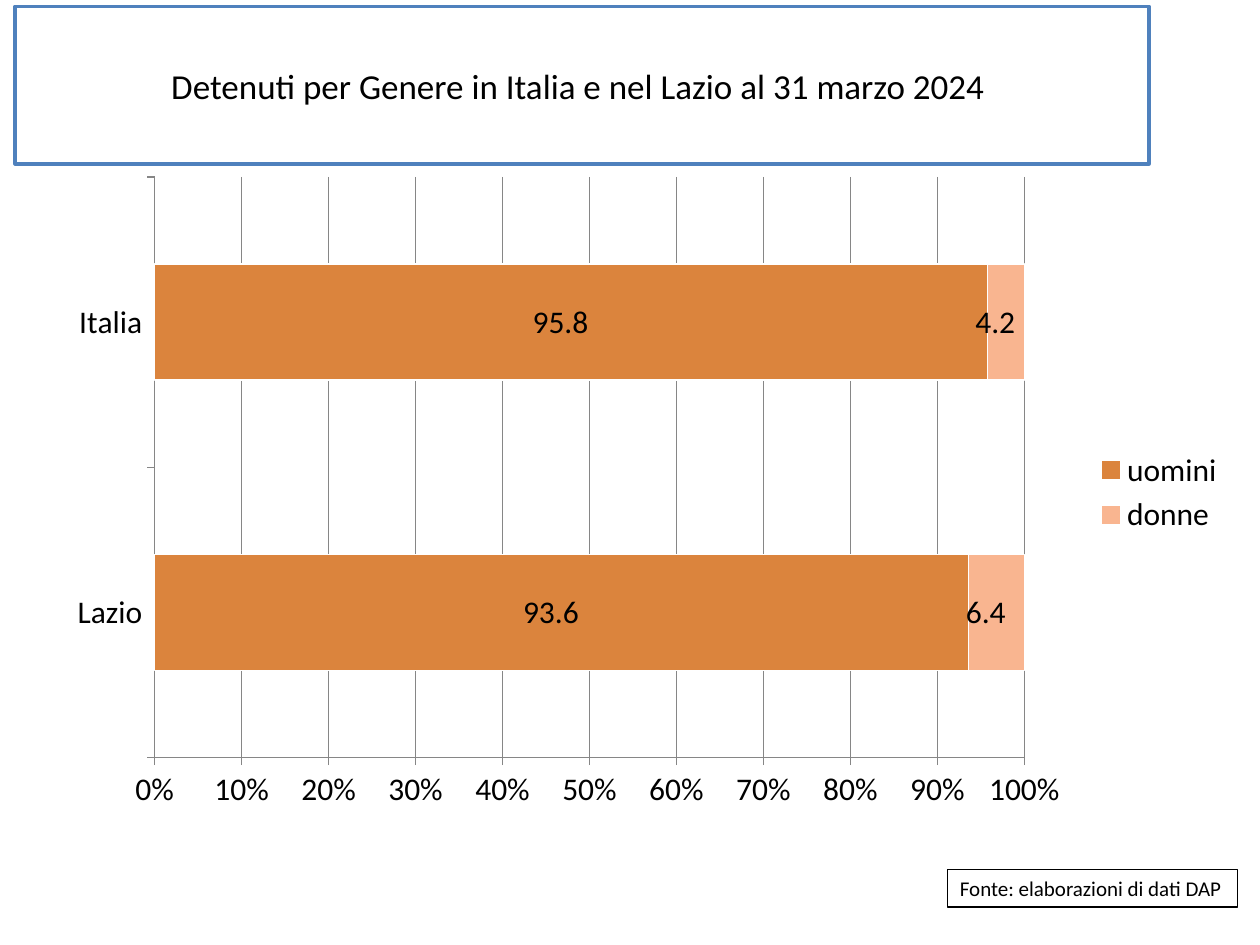
"""Build a slide with a stacked bar chart of prisoners by gender in Italia and Lazio."""
import lxml.etree
import pptx
import pptx.chart.data
import pptx.dml.color
import pptx.enum.chart
import pptx.enum.shapes
import pptx.enum.text
import pptx.oxml
import pptx.oxml.ns
import pptx.util

Pt = pptx.util.Pt
COLORS = {
    "text": "000000",
    "paper": "FFFFFF",
    "frame": "4F81BD",
    "axis": "868686",
    "uomini": "DB843D",
    "donne": "F9B590",
}
LABEL_FORMAT = r"_-* #,##0.0\ _€_-;\-* #,##0.0\ _€_-;_-* "


def color(name):
    return pptx.dml.color.RGBColor.from_string(COLORS[name])


def style_font(font, size):
    for key, value in {"name": "Calibri", "size": Pt(size), "bold": False}.items():
        setattr(font, key, value)
    font.color.rgb = color("text")


deck = pptx.Presentation()
deck.slide_width, deck.slide_height = Pt(720), Pt(540)
slide = deck.slides.add_slide(deck.slide_layouts[6])

boxes = [
    {
        "text": "Detenuti per Genere in Italia e nel Lazio al 31 marzo 2024 ",
        "place": (8.64, 3.6, 648, 90), "size": 20, "line": ("frame", 2),
        "align": pptx.enum.text.PP_ALIGN.CENTER, "wrap": True,
    },
    {
        "text": "Fonte: elaborazioni di dati DAP",
        "place": (541.44, 496.8, 165.6, 21.6), "size": 12, "line": ("text", 0.75),
        "align": pptx.enum.text.PP_ALIGN.LEFT, "wrap": False,
    },
]
for item in boxes:
    box = slide.shapes.add_shape(
        pptx.enum.shapes.MSO_SHAPE.RECTANGLE, *[Pt(length) for length in item["place"]]
    )
    box.shadow.inherit = False
    box.fill.solid()
    box.fill.fore_color.rgb = color("paper")
    line_color, line_width = item["line"]
    box.line.color.rgb = color(line_color)
    box.line.width = Pt(line_width)
    frame = box.text_frame
    frame.word_wrap = item["wrap"]
    frame.vertical_anchor = pptx.enum.text.MSO_ANCHOR.MIDDLE
    para = frame.paragraphs[0]
    para.alignment = item["align"]
    span = para.add_run()
    span.text = item["text"]
    style_font(span.font, item["size"])

data = pptx.chart.data.CategoryChartData()
data.categories = ["Lazio", "Italia"]
data.add_series("uomini", (93.6, 95.8))
data.add_series("donne", (6.4, 4.2))
chart = slide.shapes.add_chart(
    pptx.enum.chart.XL_CHART_TYPE.BAR_STACKED_100,
    Pt(30.96), Pt(93.6), Pt(676.08), Pt(375.84), data,
).chart
style_font(chart.font, 18)
chart.has_title = False
chart.has_legend = True
chart.legend.position = pptx.enum.chart.XL_LEGEND_POSITION.RIGHT
chart.legend.include_in_layout = False
style_font(chart.legend.font, 18)

plot = chart.plots[0]
for key, value in {"gap_width": 150, "overlap": 100, "vary_by_categories": False}.items():
    setattr(plot, key, value)
for series in plot.series:
    series.format.fill.solid()
    series.format.fill.fore_color.rgb = color(series.name)
    series.format.line.color.rgb = color("paper")
    series.format.line.width = Pt(0.75)
    labels = series.data_labels
    label_settings = {
        "show_value": True,
        "number_format": LABEL_FORMAT,
        "number_format_is_linked": False,
        "position": pptx.enum.chart.XL_LABEL_POSITION.CENTER,
    }
    for key, value in label_settings.items():
        setattr(labels, key, value)
    style_font(labels.font, 18)

for axis in (chart.category_axis, chart.value_axis):
    axis.major_tick_mark = pptx.enum.chart.XL_TICK_MARK.OUTSIDE
    axis.minor_tick_mark = pptx.enum.chart.XL_TICK_MARK.NONE
    axis.format.line.color.rgb = color("axis")
    axis.format.line.width = Pt(0.75)
    style_font(axis.tick_labels.font, 18)
value_axis = chart.value_axis
for key, value in {"minimum_scale": 0, "maximum_scale": 1, "major_unit": 0.1}.items():
    setattr(value_axis, key, value)
value_axis.has_major_gridlines = True
value_axis.major_gridlines.format.line.color.rgb = color("axis")
value_axis.major_gridlines.format.line.width = Pt(0.75)
value_axis.tick_labels.number_format = "0%"
value_axis.tick_labels.number_format_is_linked = False

qn = pptx.oxml.ns.qn
plot_area = chart.element.find(".//" + qn("c:plotArea"))
for old_layout in plot_area.findall(qn("c:layout")):
    plot_area.remove(old_layout)
layout = pptx.oxml.parse_xml(f"<c:layout {pptx.oxml.ns.nsdecls('c')}><c:manualLayout/></c:layout>")
plot_area.insert(0, layout)
layout_values = {
    "layoutTarget": "inner", "xMode": "edge", "yMode": "edge",
    "x": 0.085, "y": 0.02, "w": 0.735, "h": 0.883,
}
for key, value in layout_values.items():
    lxml.etree.SubElement(layout[0], qn(f"c:{key}")).set("val", str(value))

deck.save("out.pptx")
